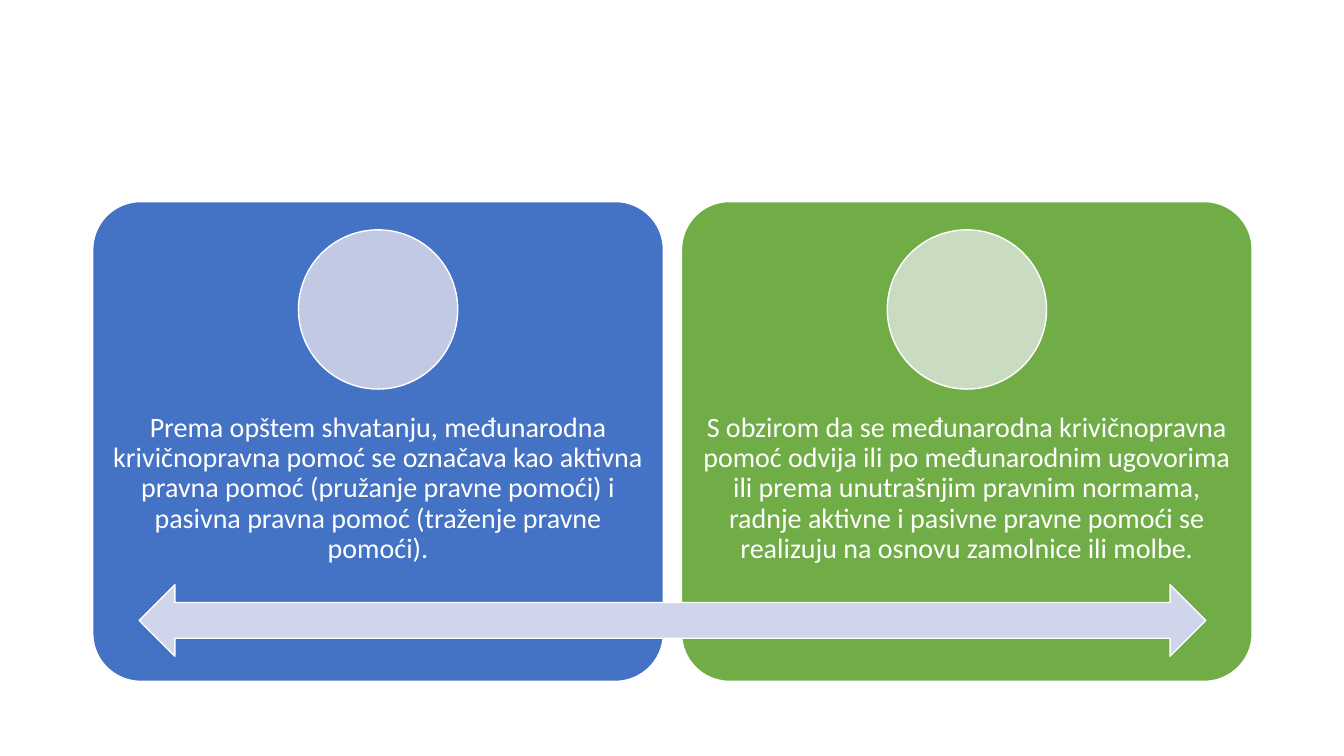
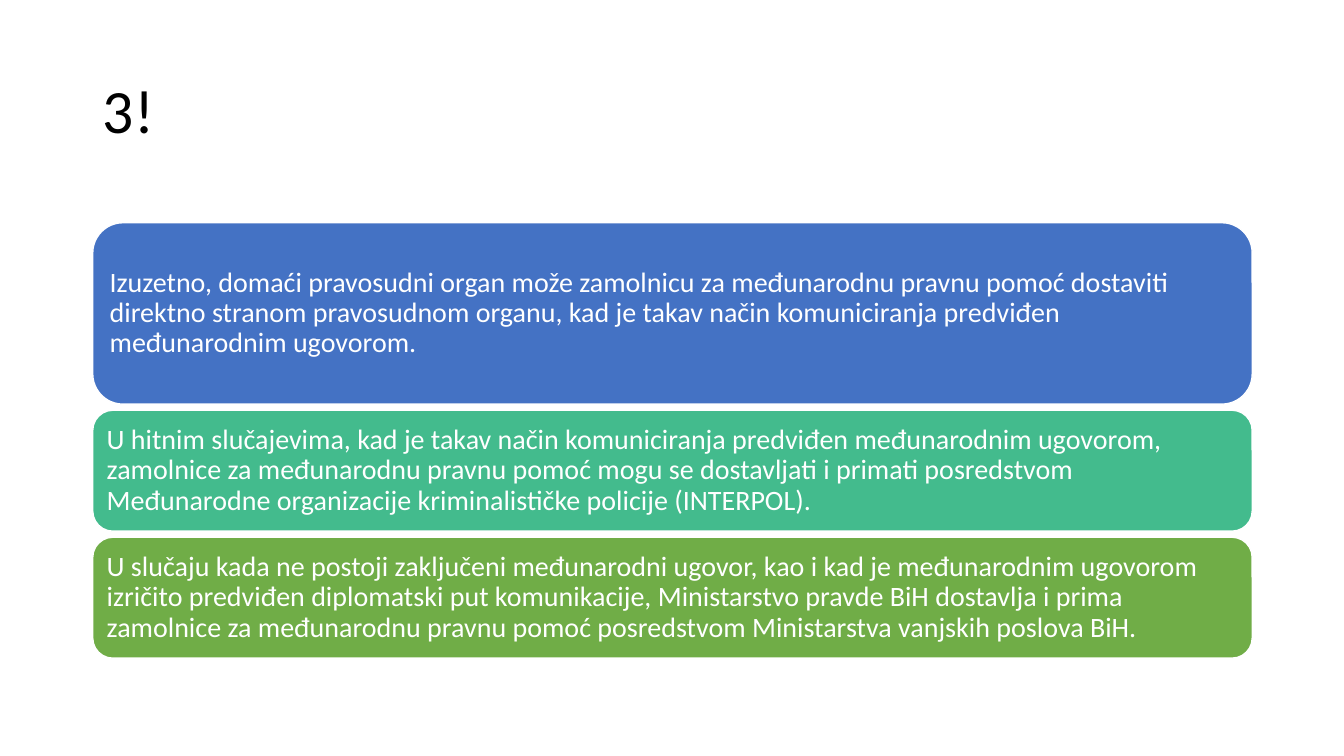
import pptx
import pptx.util
import pptx.dml.color
import pptx.enum.shapes
import pptx.enum.text

Inches = pptx.util.Inches
Kind = pptx.enum.shapes.MSO_SHAPE
Align = pptx.enum.text.PP_ALIGN
Anchor = pptx.enum.text.MSO_ANCHOR

hues = {
    "blue": "4472C4",
    "teal": "43BB8D",
    "green": "70AD47",
    "pale blue": "C1C9E4",
    "pale green": "C9DBC1",
    "arrow": "CFD5EA",
    "white": "FFFFFF",
    "black": "000000",
}
left, full = 0.92, 11.5


def write(shape, text, size=20, hue="white", align=Align.LEFT, pads=(0.08, 0.08, 0.08, 0.08)):
    frame = shape.text_frame
    frame.word_wrap = True
    frame.vertical_anchor = Anchor.MIDDLE
    frame.margin_left, frame.margin_top, frame.margin_right, frame.margin_bottom = map(Inches, pads)
    para = frame.paragraphs[0]
    para.alignment = align
    para.line_spacing = 0.9
    run = para.add_run()
    run.text = text
    run.font.name = "Calibri"
    run.font.size = pptx.util.Pt(size)
    run.font.color.rgb = pptx.dml.color.RGBColor.from_string(hues[hue])


def draw(slide, kind, hue, *box):
    shape = slide.shapes.add_shape(kind, *map(Inches, box))
    shape.shadow.inherit = False
    shape.fill.solid()
    shape.fill.fore_color.rgb = pptx.dml.color.RGBColor.from_string(hues[hue])
    shape.line.color.rgb = pptx.dml.color.RGBColor.from_string(hues["white"])
    shape.line.width = pptx.util.Pt(1)
    return shape


deck = pptx.Presentation()
deck.slide_width = Inches(13.33)
deck.slide_height = Inches(7.5)

slide = deck.slides.add_slide(deck.slide_layouts[6])
wide, disc = 5.66, 1.58
cards = [
    ("blue", "pale blue",
     "Prema opštem shvatanju, međunarodna krivičnopravna pomoć se označava kao aktivna "
     "pravna pomoć (pružanje pravne pomoći) i pasivna pravna pomoć (traženje pravne pomoći)."),
    ("green", "pale green",
     "S obzirom da se međunarodna krivičnopravna pomoć odvija ili po međunarodnim ugovorima "
     "ili prema unutrašnjim pravnim normama, radnje aktivne i pasivne pravne pomoći se "
     "realizuju na osnovu zamolnice ili molbe."),
]
for i, (hue, tint, text) in enumerate(cards):
    x = left + i * (full - wide)
    card = draw(slide, Kind.ROUNDED_RECTANGLE, hue, x, 2, wide, 4.76)
    card.adjustments[0] = 0.1
    write(card, text, align=Align.CENTER, pads=(0.02, 1.92, 0.02, 0.98))
    draw(slide, Kind.OVAL, tint, x + (wide - disc) / 2, 2.28, disc, disc)
draw(slide, Kind.LEFT_RIGHT_ARROW, "arrow", 1.38, 5.8, 10.58, 0.71)

slide = deck.slides.add_slide(deck.slide_layouts[5])
title = slide.shapes.title
title.left, title.top, title.width, title.height = map(Inches, (left, 0.4, full, 1.45))
write(title, "3!", size=44, hue="black", pads=(0.1, 0.05, 0.1, 0.05))
bars = [
    ("blue", 1.8,
     "Izuzetno, domaći pravosudni organ može zamolnicu za međunarodnu pravnu pomoć dostaviti "
     "direktno stranom pravosudnom organu, kad je takav način komuniciranja predviđen "
     "međunarodnim ugovorom."),
    ("teal", 1.2,
     "U hitnim slučajevima, kad je takav način komuniciranja predviđen međunarodnim ugovorom, "
     "zamolnice za međunarodnu pravnu pomoć mogu se dostavljati i primati posredstvom "
     "Međunarodne organizacije kriminalističke policije (INTERPOL)."),
    ("green", 1.2,
     "U slučaju kada ne postoji zaključeni međunarodni ugovor, kao i kad je međunarodnim "
     "ugovorom izričito predviđen diplomatski put komunikacije, Ministarstvo pravde BiH "
     "dostavlja i prima zamolnice za međunarodnu pravnu pomoć posredstvom Ministarstva "
     "vanjskih poslova BiH."),
]
top = 2.21
for hue, high, text in bars:
    write(draw(slide, Kind.ROUNDED_RECTANGLE, hue, left, top, full, high), text)
    top += high + 0.06

deck.save("out.pptx")
